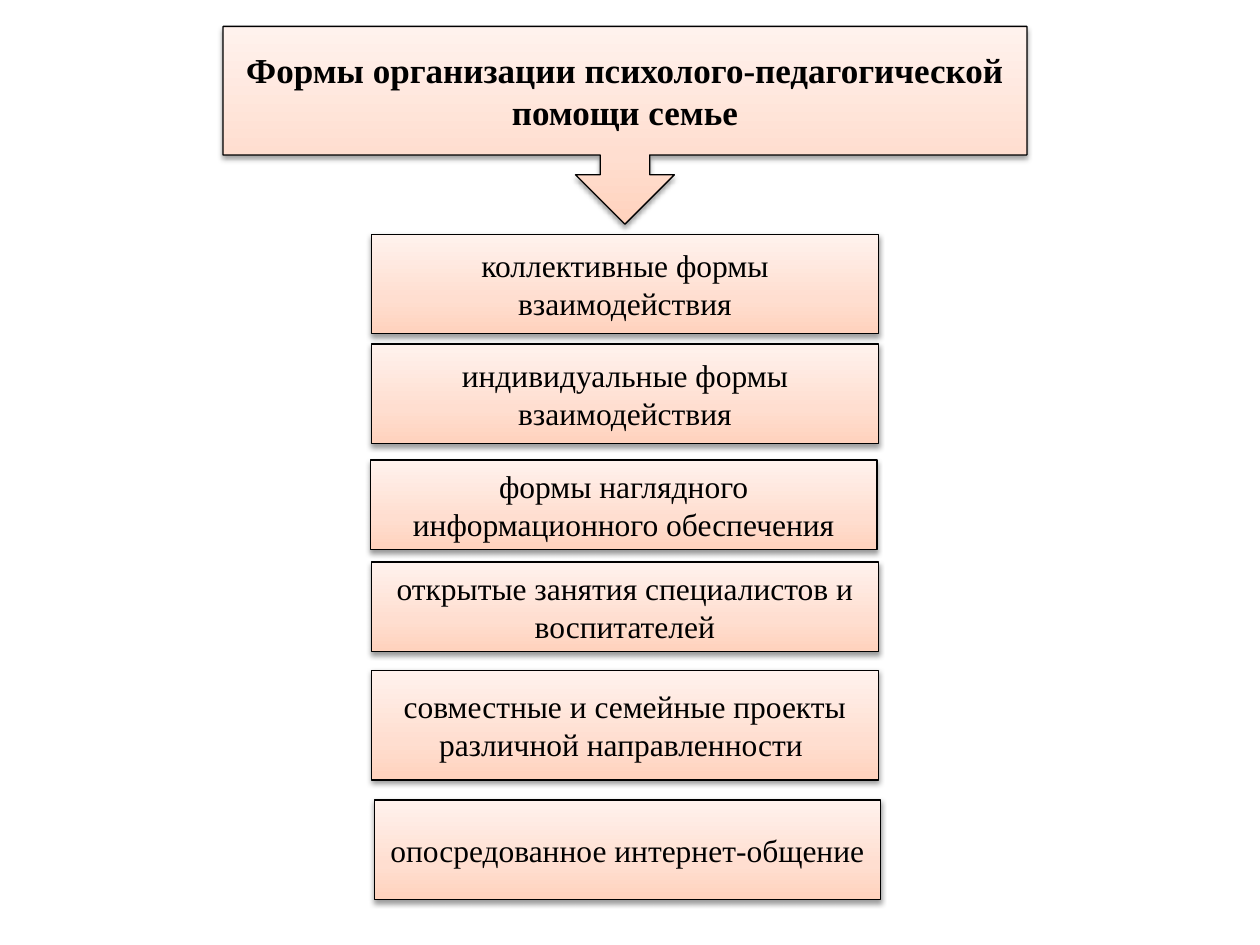
from copy import deepcopy

from pptx import Presentation
from pptx.dml.color import RGBColor
from pptx.enum.shapes import MSO_SHAPE as Preset
from pptx.enum.text import MSO_ANCHOR as Anchor, PP_ALIGN as Align
from pptx.oxml import parse_xml
from pptx.oxml.ns import nsdecls, qn
from pptx.util import Inches, Pt

COLOURS = {
    "ink": "000000",
    "deep": "FFD2BD",
    "middle": "FFDED0",
    "pale": "FFF2ED",
}
GRADIENT = [(0, "deep"), (0.35, "middle"), (1, "pale")]
FORMS = [
    ("коллективные формы взаимодействия", 2.95, 1.86, 0.79),
    ("индивидуальные формы взаимодействия", 2.95, 2.73, 0.79),
    ("формы наглядного информационного обеспечения", 2.94, 3.65, 0.71),
    ("открытые занятия специалистов и воспитателей", 2.95, 4.46, 0.71),
    ("совместные и семейные проекты различной направленности ", 2.95, 5.32, 0.87),
    ("опосредованное интернет-общение", 2.97, 6.35, 0.79),
]
FORM_WIDTH = 4.02


def colour(name):
    return RGBColor.from_string(COLOURS[name])


def fill_gradient(shape):
    shape.fill.gradient()
    shape.fill.gradient_angle = 90
    stop_list = shape._element.spPr.find(qn("a:gradFill")).find(qn("a:gsLst"))
    stop_list.append(deepcopy(stop_list[-1]))
    for stop, (position, name) in zip(shape.fill.gradient_stops, GRADIENT):
        stop.position = position
        stop.color.rgb = colour(name)


def add_shadow(shape):
    shape.shadow.inherit = False
    effects = shape._element.spPr.find(qn("a:effectLst"))
    effects.append(parse_xml(
        f'<a:outerShdw {nsdecls("a")} blurRad="{Pt(3.1)}" dist="{Pt(1.6)}" '
        f'dir="5400000" rotWithShape="0"><a:srgbClr val="{COLOURS["ink"]}">'
        '<a:alpha val="38000"/></a:srgbClr></a:outerShdw>'
    ))


def write_text(shape, text, size=18, bold=False, font="Times New Roman", ink="ink"):
    frame = shape.text_frame
    frame.word_wrap = True
    frame.vertical_anchor = Anchor.MIDDLE
    paragraph = frame.paragraphs[0]
    paragraph.alignment = Align.CENTER
    run = paragraph.add_run()
    run.text = text
    run.font.name = font
    run.font.size = Pt(size)
    run.font.bold = bold
    run.font.color.rgb = colour(ink)


def add_box(slide, preset, box, text, **text_format):
    shape = slide.shapes.add_shape(preset, *map(Inches, box))
    fill_gradient(shape)
    shape.line.color.rgb = colour("ink")
    shape.line.width = Pt(0.75)
    add_shadow(shape)
    write_text(shape, text, **text_format)


def main():
    """Build the slide on forms of support for families."""
    presentation = Presentation()
    presentation.slide_width = Inches(10)
    presentation.slide_height = Inches(7.5)
    slide = presentation.slides.add_slide(presentation.slide_layouts[6])
    add_box(slide, Preset.DOWN_ARROW_CALLOUT, (1.77, 0.21, 6.38, 1.57),
            "Формы организации психолого-педагогической помощи семье",
            size=20, bold=True)
    for text, left, top, height in FORMS:
        add_box(slide, Preset.RECTANGLE, (left, top, FORM_WIDTH, height), text)
    presentation.save("out.pptx")


if __name__ == "__main__":
    main()
